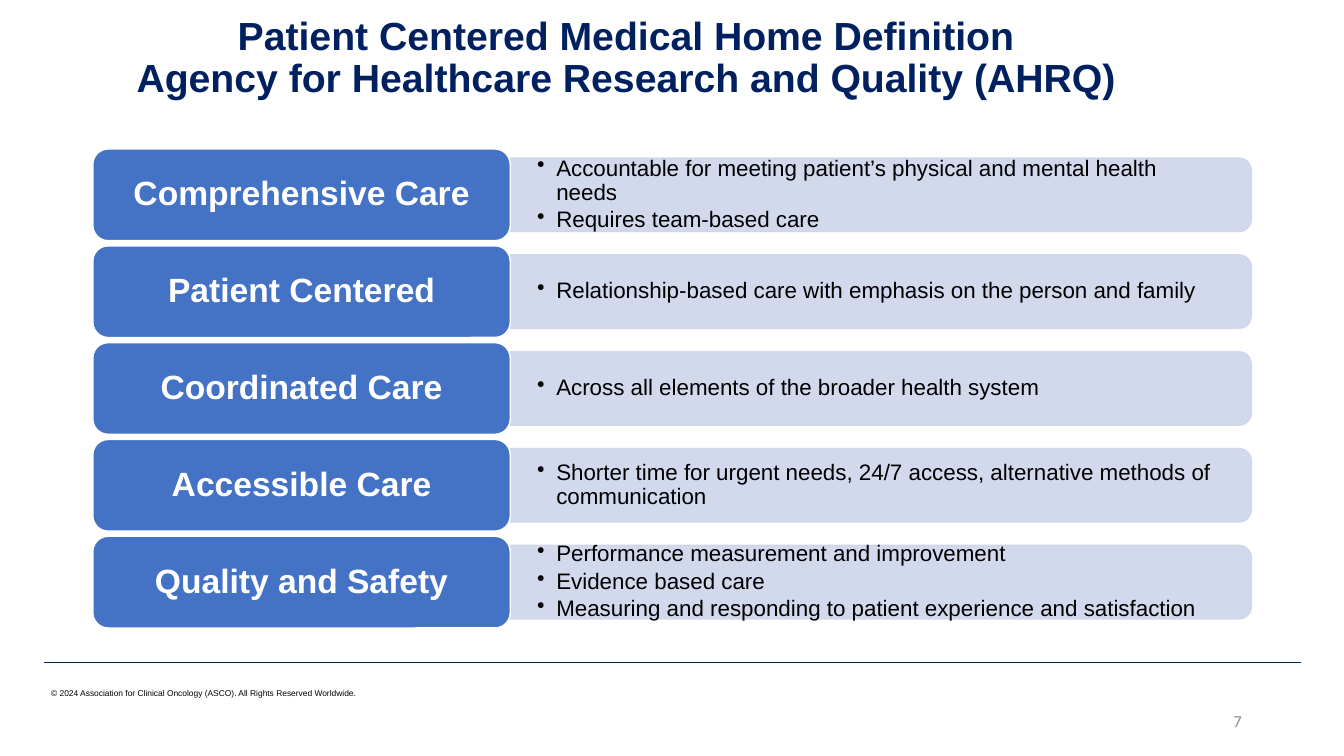
from lxml import etree
from pptx import Presentation, util as u
from pptx.dml.color import RGBColor
from pptx.enum import shapes, text
from pptx.oxml.ns import qn

Cm, Pt = u.Cm, u.Pt


def paint(fmt, code):
    if hasattr(fmt, "solid"):
        fmt.solid()
        fmt = fmt.fore_color
    fmt.rgb = RGBColor.from_string(code)


def write(par, line, size, code, bold=False, face="Arial"):
    run = par.add_run()
    run.text = line
    run.font.size = Pt(size)
    run.font.name = face
    run.font.bold = bold
    paint(run.font.color, code)


deck = Presentation()
deck.slide_width, deck.slide_height = Cm(33.87), Cm(19.05)
slide = deck.slides.add_slide(deck.slide_layouts[6])
parts = slide.shapes

rule = parts.add_connector(shapes.MSO_CONNECTOR.STRAIGHT, Cm(1.12), Cm(16.69), Cm(32.79), Cm(16.69))
paint(rule.line.fill, "002557")
rule.line.width = Pt(0.25)
etree.SubElement(rule._element.spPr, qn("a:effectLst"))

rows = [
    ("Comprehensive Care", ["Accountable for meeting patient’s physical and mental health needs",
                            "Requires team-based care"]),
    ("Patient Centered", ["Relationship-based care with emphasis on the person and family"]),
    ("Coordinated Care", ["Across all elements of the broader health system"]),
    ("Accessible Care", ["Shorter time for urgent needs, 24/7 access, alternative methods of communication"]),
    ("Quality and Safety", ["Performance measurement and improvement", "Evidence based care",
                            "Measuring and responding to patient experience and satisfaction"]),
]
bar_w, bar_h, mid_x = 1.85, 18.69, 22.19
tag_h, note_h = 2.31, 1.68

for i, (name, points) in enumerate(rows):
    mid = 4.91 + 2.44 * i

    bar = parts.add_shape(shapes.MSO_SHAPE.ROUND_2_SAME_RECTANGLE, Cm(mid_x - bar_w / 2),
                          Cm(mid - bar_h / 2), Cm(bar_w), Cm(bar_h))
    bar.rotation = 90
    bar.shadow.inherit = False
    bar.line.width = Pt(1)
    for fill in (bar.fill, bar.line.fill):
        paint(fill, "CFD5EA")
    for tint in bar._element.spPr.iter(qn("a:srgbClr")):
        etree.SubElement(tint, qn("a:alpha"), val="90000")

    note = parts.add_textbox(Cm(12.85), Cm(mid - note_h / 2), Cm(18.59), Cm(note_h))
    frame = note.text_frame
    frame.word_wrap = True
    frame.vertical_anchor = text.MSO_ANCHOR.MIDDLE
    frame.margin_left = frame.margin_right = Cm(0.69)
    frame.margin_top = frame.margin_bottom = Cm(0.36)
    for j, point in enumerate(points):
        par = frame.add_paragraph() if j else frame.paragraphs[0]
        props = par._p.get_or_add_pPr()
        props.set("marL", str(Cm(0.48)))
        props.set("indent", str(-Cm(0.48)))
        etree.SubElement(props, qn("a:buChar"), char="•")
        par.line_spacing = 0.9
        par.space_after = Pt(2.4)
        write(par, point, 16, "000000")

    tag = parts.add_shape(shapes.MSO_SHAPE.ROUNDED_RECTANGLE, Cm(2.34), Cm(mid - tag_h / 2),
                          Cm(10.52), Cm(tag_h))
    tag.shadow.inherit = False
    paint(tag.fill, "4472C4")
    paint(tag.line.fill, "FFFFFF")
    tag.line.width = Pt(1)
    tag.text_frame.vertical_anchor = text.MSO_ANCHOR.MIDDLE
    par = tag.text_frame.paragraphs[0]
    par.alignment = text.PP_ALIGN.CENTER
    par.line_spacing = 0.9
    write(par, name, 24, "FFFFFF", True)

page = parts.add_textbox(Cm(23.93), Cm(17.65), Cm(7.62), Cm(1.02))
page.text_frame.word_wrap = True
page.text_frame.vertical_anchor = text.MSO_ANCHOR.MIDDLE
par = page.text_frame.paragraphs[0]
par.alignment = text.PP_ALIGN.RIGHT
write(par, "7", 12, "8C8C8C", face="Calibri")

title = parts.add_textbox(Cm(2.16), Cm(0.64), Cm(27.23), Cm(1.68))
title.text_frame.word_wrap = True
title.text_frame.vertical_anchor = text.MSO_ANCHOR.MIDDLE
par = title.text_frame.paragraphs[0]
par.alignment = text.PP_ALIGN.CENTER
par.line_spacing = 0.9
write(par, "Patient Centered Medical Home Definition", 28, "002060", True)
par.add_line_break()
write(par, "Agency for Healthcare Research and Quality (AHRQ)", 28, "002060", True)

foot = parts.add_textbox(Cm(1.04), Cm(16.95), Cm(11.43), Cm(1.02))
foot.text_frame.word_wrap = True
foot.text_frame.vertical_anchor = text.MSO_ANCHOR.MIDDLE
write(foot.text_frame.paragraphs[0],
      "© 2024 Association for Clinical Oncology (ASCO). All Rights Reserved Worldwide.", 6, "000000")

deck.save("out.pptx")
